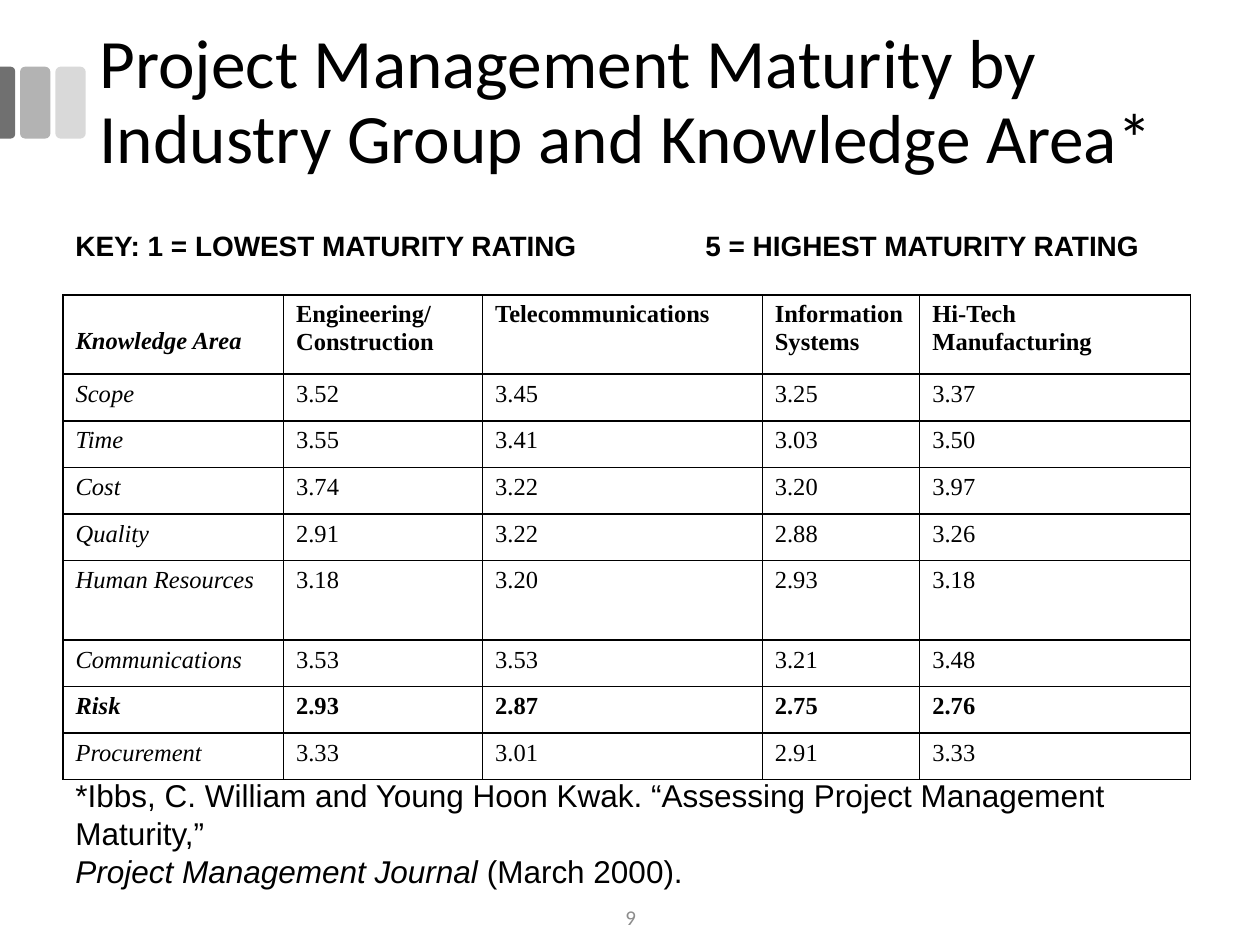
from dataclasses import dataclass

from lxml.etree import SubElement
from pptx import Presentation
from pptx.dml.color import RGBColor
from pptx.enum.shapes import MSO_SHAPE
from pptx.enum.text import MSO_ANCHOR, MSO_AUTO_SIZE, PP_ALIGN
from pptx.oxml import parse_xml
from pptx.oxml.ns import nsdecls, qn
from pptx.util import Inches, Pt


@dataclass(frozen=True)
class Theme:
    ink: str = "000000"
    page_number: str = "8C8C8C"
    light_bar: str = "D9D9D9"
    mid_bar: str = "B3B3B3"
    dark_bar: str = "707070"
    title_font: str = "Calibri"
    body_font: str = "Arial"
    table_font: str = "Times New Roman"
    title_size: float = 39.6
    key_size: int = 16
    table_size: int = 14
    note_size: int = 18
    number_size: int = 12
    border_width: int = 1


THEME = Theme()

COLUMN_WIDTHS = [1.75, 1.58, 2.22, 1.25, 2.15]
ROW_HEIGHT, TALL_ROW_HEIGHT = 0.37, 0.63
TALL_ROWS = {"Knowledge Area", "Human Resources"}
BOLD_ROWS = {"Knowledge Area", "Risk"}
RATINGS = [
    ["Knowledge Area", "Engineering/ Construction", "Telecommunications",
     "Information Systems", "Hi-Tech Manufacturing"],
    ["Scope", "3.52", "3.45", "3.25", "3.37"],
    ["Time", "3.55", "3.41", "3.03", "3.50"],
    ["Cost", "3.74", "3.22", "3.20", "3.97"],
    ["Quality", "2.91", "3.22", "2.88", "3.26"],
    ["Human Resources", "3.18", "3.20", "2.93", "3.18"],
    ["Communications", "3.53", "3.53", "3.21", "3.48"],
    ["Risk", "2.93", "2.87", "2.75", "2.76"],
    ["Procurement", "3.33", "3.01", "2.91", "3.33"],
]


def inches(box):
    return [Inches(length) for length in box]


def add_run(paragraph, text, font, size, color=THEME.ink, bold=False, italic=False):
    run = paragraph.add_run()
    run.text = text
    run.font.name, run.font.size = font, Pt(size)
    run.font.bold, run.font.italic = bold, italic
    run.font.color.rgb = RGBColor.from_string(color)


def add_frame(slide, box):
    frame = slide.shapes.add_textbox(*inches(box)).text_frame
    frame.word_wrap = True
    frame.vertical_anchor = MSO_ANCHOR.MIDDLE
    return frame


def add_bars(slide, box):
    """Three bars, lightest on the right; the darkest runs off the left edge."""
    left, top, width, height = box

    def add_bar(kind, bar_box, color):
        bar = slide.shapes.add_shape(kind, *inches(bar_box))
        bar.shadow.inherit = False
        bar.fill.solid()
        bar.fill.fore_color.rgb = RGBColor.from_string(color)
        bar.line.fill.background()
        return bar

    bar_width, step = 0.24, 0.28
    for place, color in enumerate([THEME.light_bar, THEME.mid_bar]):
        bar_left = left + width - bar_width - place * step
        add_bar(MSO_SHAPE.ROUNDED_RECTANGLE, (bar_left, top, bar_width, height), color)

    # The edge bar is turned a quarter, so its length lies along its width
    edge_width = 0.12
    edge_box = (left + (edge_width - height) / 2, top + (height - edge_width) / 2,
                height, edge_width)
    edge = add_bar(MSO_SHAPE.ROUND_2_SAME_RECTANGLE, edge_box, THEME.dark_bar)
    edge.adjustments[0] = 0.29
    edge.rotation = 90


def place_title(slide, box):
    title = slide.shapes.title
    title.left, title.top, title.width, title.height = inches(box)
    frame = title.text_frame
    frame.word_wrap = True
    frame.auto_size = MSO_AUTO_SIZE.NONE
    frame.vertical_anchor = MSO_ANCHOR.MIDDLE
    heading = frame.paragraphs[0]
    heading.alignment = PP_ALIGN.LEFT
    heading.line_spacing = 0.9
    add_run(heading, "Project Management Maturity by Industry Group and Knowledge Area*",
            THEME.title_font, THEME.title_size)


def add_key(slide, box):
    key = add_frame(slide, box).paragraphs[0]
    tabs = SubElement(key._p.get_or_add_pPr(), qn("a:tabLst"))
    SubElement(tabs, qn("a:tab"), pos=str(Inches(5)), algn="l")
    add_run(key, "KEY: 1 = LOWEST MATURITY RATING\t5 = HIGHEST MATURITY RATING",
            THEME.body_font, THEME.key_size, bold=True)


def set_borders(cell):
    cell_properties = cell._tc.get_or_add_tcPr()
    for place, side in enumerate(["lnL", "lnR", "lnT", "lnB"]):
        cell_properties.insert(place, parse_xml(
            f'<a:{side} {nsdecls("a")} w="{Pt(THEME.border_width)}"><a:solidFill>'
            f'<a:srgbClr val="{THEME.ink}"/></a:solidFill></a:{side}>'))


def add_ratings(slide, box):
    ratings = slide.shapes.add_table(len(RATINGS), len(COLUMN_WIDTHS), *inches(box)).table
    ratings.first_row = ratings.horz_banding = False
    for column, width in zip(ratings.columns, COLUMN_WIDTHS):
        column.width = Inches(width)
    for row, values in zip(ratings.rows, RATINGS):
        area = values[0]
        row.height = Inches(TALL_ROW_HEIGHT if area in TALL_ROWS else ROW_HEIGHT)
        for place, (cell, value) in enumerate(zip(row.cells, values)):
            cell.fill.background()
            set_borders(cell)
            add_run(cell.text_frame.paragraphs[0], value, THEME.table_font,
                    THEME.table_size, bold=area in BOLD_ROWS, italic=place == 0)
    # The corner heading sits level with the second line of the others
    ratings.cell(0, 0).margin_top = Inches(0.26)


def add_citation(slide, box):
    frame = add_frame(slide, box)
    font, size = THEME.body_font, THEME.note_size
    add_run(frame.paragraphs[0], "*Ibbs, C. William and Young Hoon Kwak. "
            "“Assessing Project Management Maturity,”", font, size)
    journal = frame.add_paragraph()
    add_run(journal, "Project Management Journal", font, size, italic=True)
    add_run(journal, " (March 2000).", font, size)


def add_page_number(slide, box):
    number = add_frame(slide, box).paragraphs[0]
    number.alignment = PP_ALIGN.CENTER
    add_run(number, "9", THEME.title_font, THEME.number_size, THEME.page_number)


def main():
    deck = Presentation()
    deck.slide_width, deck.slide_height = Inches(10), Inches(7.5)
    slide = deck.slides.add_slide(deck.slide_layouts.get_by_name("Title Only"))
    add_bars(slide, (0, 0.53, 0.68, 0.57))
    place_title(slide, (0.69, 0.17, 8.62, 1.31))
    add_page_number(slide, (3.88, 7.08, 2.25, 0.4))
    add_key(slide, (0.5, 1.76, 8.81, 0.37))
    add_ratings(slide, (0.5, 2.34, 8.95, 3.83))
    add_citation(slide, (0.5, 6.26, 8.99, 0.7))
    deck.save("out.pptx")


if __name__ == "__main__":
    main()
